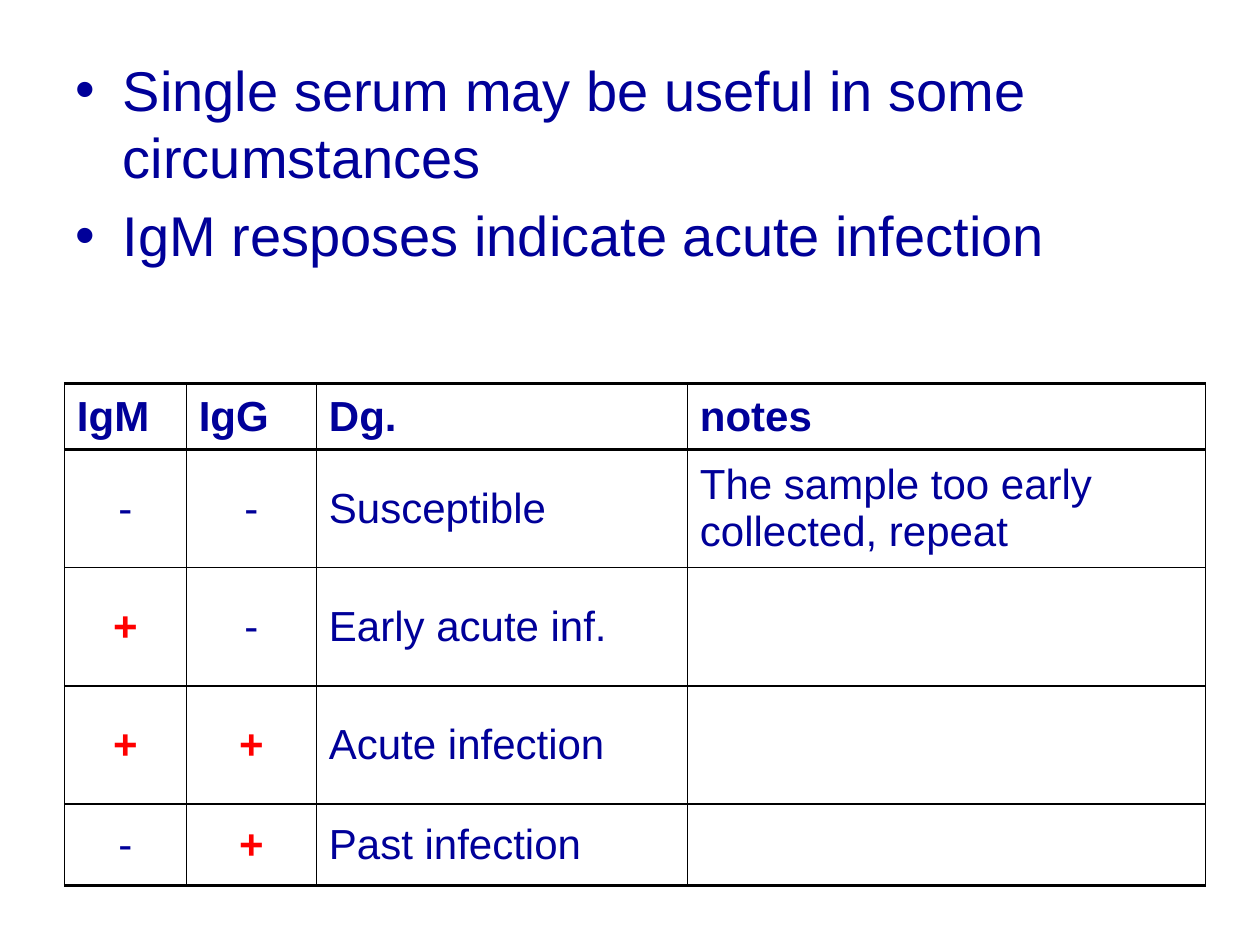
from lxml.etree import SubElement
from pptx import Presentation
from pptx.dml.color import RGBColor
from pptx.enum.text import MSO_ANCHOR as Anchor, MSO_AUTO_SIZE as AutoSize, PP_ALIGN as Align
from pptx.oxml.ns import qn
from pptx.util import Pt

NAVY = RGBColor(0x00, 0x00, 0x99)
RED = RGBColor(0xFF, 0x00, 0x00)
WHITE = RGBColor(0xFF, 0xFF, 0xFF)
BLACK = RGBColor(0x00, 0x00, 0x00)

POINTS = ["Single serum may be useful in some circumstances",
          "IgM resposes indicate acute infection"]
COLUMN_WIDTHS = [69.6, 74.4, 212, 296]
ROW_HEIGHTS = [37.6, 67.5, 67.5, 67.5, 46.5]
RESULTS = [["IgM", "IgG", "Dg.", "notes"],
           ["-", "-", "Susceptible", "The sample too early collected, repeat"],
           ["+", "-", "Early acute inf.", ""],
           ["+", "+", "Acute infection", ""],
           ["-", "+", "Past infection", ""]]


def write(para, text, size, color=NAVY, bold=False, align=None, font="Arial"):
    span = para.add_run()
    span.text = text
    span.font.name = font
    span.font.size = Pt(size)
    span.font.bold = bold
    span.font.color.rgb = color
    para.alignment = align


def set_border(cell, side, width, color=BLACK):
    """Draw one side of a cell; side is L, R, T or B."""
    line = SubElement(cell._tc.get_or_add_tcPr(), qn(f"a:ln{side}"), w=str(Pt(width)))
    fill = SubElement(line, qn("a:solidFill"))
    SubElement(fill, qn("a:srgbClr"), val=str(color))


class SlideBuilder:
    thin, medium, thick = 0.75, 1, 2
    body_size, table_size = 32, 24

    def __init__(self, deck):
        self.page = deck.slides.add_slide(deck.slide_layouts[1])
        title = self.page.shapes.title._element
        title.getparent().remove(title)

    def bullets(self, points, left, top, width, height):
        """Fill the body placeholder, which brings its own bullets and indents."""
        box = self.page.placeholders[1]
        box.left, box.top, box.width, box.height = map(Pt, (left, top, width, height))
        frame = box.text_frame
        frame.auto_size = AutoSize.NONE
        for index, point in enumerate(points):
            para = frame.add_paragraph() if index else frame.paragraphs[0]
            write(para, point, self.body_size)

    def table(self, rows, left, top, widths, heights):
        shape = self.page.shapes.add_table(len(rows), len(widths), Pt(left), Pt(top),
                                           Pt(sum(widths)), Pt(sum(heights)))
        table = shape.table
        table.first_row = table.horz_banding = False
        for column, width in zip(table.columns, widths):
            column.width = Pt(width)
        for row, height in zip(table.rows, heights):
            row.height = Pt(height)
        for r, texts in enumerate(rows):
            for c, text in enumerate(texts):
                self.cell(table.cell(r, c), text, r, c, len(rows) - 1)

    def cell(self, cell, text, row, column, last_row):
        header, positive = row == 0, text == "+"
        cell.vertical_anchor = Anchor.MIDDLE
        for side in "LR":
            set_border(cell, side, self.thin)
        set_border(cell, "T", self.thick if row <= 1 else self.medium)
        set_border(cell, "B", self.thick if row in (0, last_row) else self.medium)
        cell.fill.solid()
        cell.fill.fore_color.rgb = WHITE
        if text:
            write(cell.text_frame.paragraphs[0], text, self.table_size,
                  color=RED if positive else NAVY, bold=header or positive,
                  align=Align.CENTER if column < 2 and not header else Align.LEFT)


def main():
    deck = Presentation()
    deck.slide_width, deck.slide_height = Pt(720), Pt(540)
    slide = SlideBuilder(deck)
    slide.bullets(POINTS, 36, 28, 648, 135.5)
    slide.table(RESULTS, 36.8, 219.3, COLUMN_WIDTHS, ROW_HEIGHTS)
    deck.save("out.pptx")


if __name__ == "__main__":
    main()
